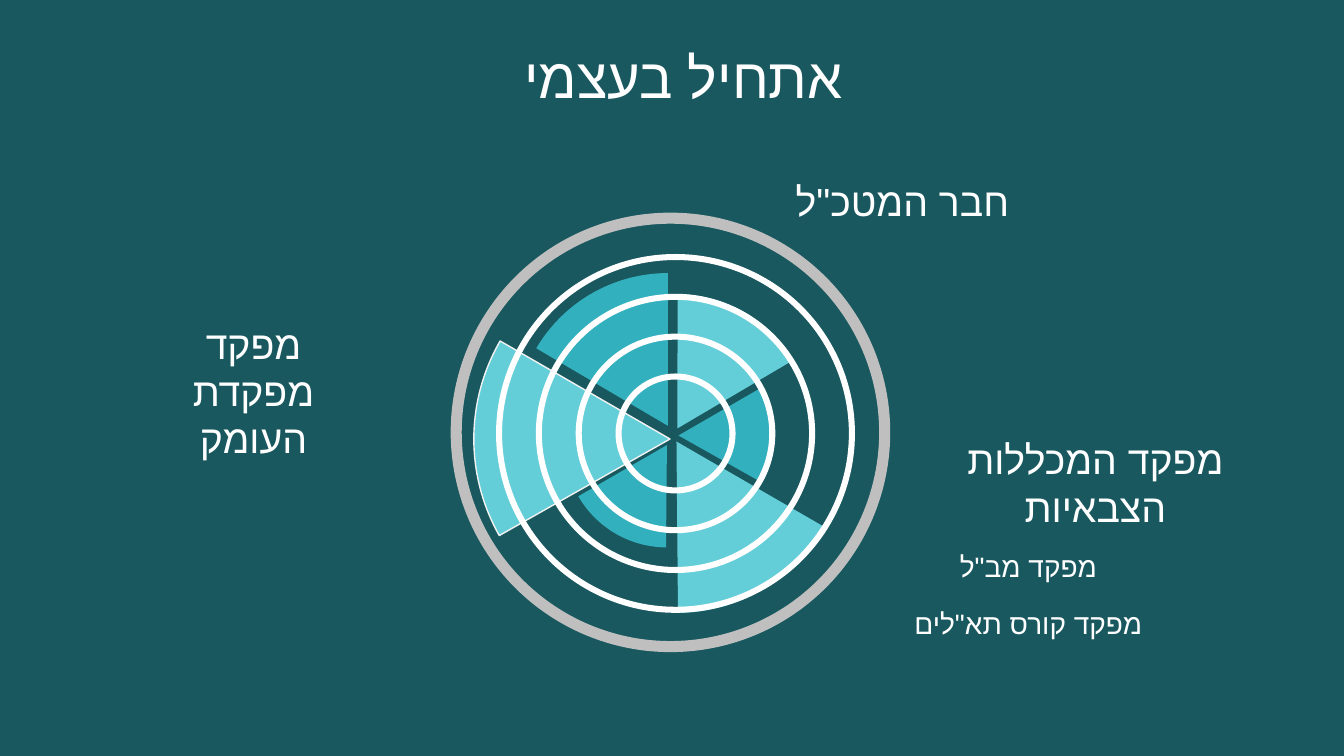
from lxml.etree import SubElement
from pptx import Presentation
from pptx.dml.color import RGBColor
from pptx.enum.shapes import MSO_SHAPE
from pptx.enum.text import MSO_ANCHOR, MSO_AUTO_SIZE, PP_ALIGN
from pptx.oxml.ns import qn
from pptx.util import Inches, Pt

BACKGROUND = RGBColor(0x19, 0x58, 0x5F)
WHITE = RGBColor(0xFF, 0xFF, 0xFF)
GREY = RGBColor(0xBF, 0xBF, 0xBF)
TEAL = RGBColor(0x32, 0xB0, 0xBE)
AQUA = RGBColor(0x64, 0xCE, 0xD8)
EDGE = RGBColor(0xF2, 0xF2, 0xF2)
FONT = "Arial"

HEADING = ("אתחיל בעצמי", 4.6, 0.4, 4.36, 0.79, 40)
ROLES = [
    ('מפקד קורס תא"לים', 8.96, 5.98, 2.48, 0.4, 20),
    ('מפקד מב"ל', 8.96, 5.42, 2.48, 0.39, 20),
    ("מפקד המכללות הצבאיות", 9.4, 4.32, 2.93, 0.94, 28),
    ("מפקד מפקדת העומק", 1.33, 3.38, 2.37, 1, 28),
    ('חבר המטכ"ל', 7.72, 1.52, 2.46, 0.94, 28),
]
LEFT_WEDGES = [
    (5.11, 2.71, 3.03, 3.03, TEAL, None),
    (4.7, 2.41, 3.89, 3.89, AQUA, EDGE),
    (5.6, 3.4, 2.03, 2.03, TEAL, None),
]
RIGHT_WEDGES = [
    (5.4, 2.92, 2.64, 2.66, AQUA, None),
    (5.78, 3.37, 1.9, 1.9, TEAL, None),
    (5.01, 2.68, 3.4, 3.4, AQUA, None),
]
WEDGE_ANGLES = (126.304, 162)
WEDGE_STEP = 60

RING_CENTRE = (6.7, 4.3)
RING_COUNT = 4
RING_FIRST, RING_STEP, RING_WIDTH = 1.19, 0.79, 0.06
RIM_CENTRE, RIM_DIAMETER, RIM_WIDTH = (6.65, 4.29), 4.36, 0.11


def add_figure(slide, preset, box, adjustments, fill, edge=None):
    figure = slide.shapes.add_shape(preset, *map(Inches, box))
    for index, value in enumerate(adjustments):
        figure.adjustments[index] = value
    figure.shadow.inherit = False
    figure.fill.solid()
    figure.fill.fore_color.rgb = fill
    if edge is None:
        figure.line.fill.background()
    else:
        figure.line.color.rgb = edge
        figure.line.width = Pt(1)
    return figure


def add_ring(slide, centre, diameter, width, fill):
    left, top = (middle - diameter / 2 for middle in centre)
    add_figure(slide, MSO_SHAPE.DONUT, (left, top, diameter, diameter),
               [width / diameter], fill)


def add_wedges(slide, wedges, mirrored):
    for index, (left, top, width, height, fill, edge) in enumerate(wedges):
        wedge = add_figure(slide, MSO_SHAPE.PIE, (left, top, width, height),
                           WEDGE_ANGLES, fill, edge)
        turn = WEDGE_STEP * index
        wedge.rotation = turn if mirrored else -turn % 360
        if mirrored:
            wedge._element.spPr.find(qn("a:xfrm")).set("flipH", "1")


def write_hebrew(holder, wording, size):
    frame = holder.text_frame
    frame.text = wording
    frame.word_wrap = True
    frame.auto_size = MSO_AUTO_SIZE.NONE
    frame.vertical_anchor = MSO_ANCHOR.MIDDLE
    paragraph = frame.paragraphs[0]
    paragraph.alignment = PP_ALIGN.CENTER
    paragraph._p.get_or_add_pPr().set("rtl", "1")
    run = paragraph.runs[0]
    run.font.size = Pt(size)
    run.font.bold = False
    run.font.color.rgb = WHITE
    run.font.name = FONT
    SubElement(run._r.get_or_add_rPr(), qn("a:cs")).set("typeface", FONT)


def main():
    deck = Presentation()
    deck.slide_width, deck.slide_height = Inches(13.33), Inches(7.5)
    slide = deck.slides.add_slide(deck.slide_layouts[5])
    slide.background.fill.solid()
    slide.background.fill.fore_color.rgb = BACKGROUND

    wording, left, top, width, height, size = HEADING
    title = slide.shapes.title
    title.left, title.top = Inches(left), Inches(top)
    title.width, title.height = Inches(width), Inches(height)
    write_hebrew(title, wording, size)
    title.text_frame.paragraphs[0].line_spacing = 0.9

    add_ring(slide, RIM_CENTRE, RIM_DIAMETER, RIM_WIDTH, GREY)
    add_wedges(slide, LEFT_WEDGES, mirrored=False)
    add_wedges(slide, RIGHT_WEDGES, mirrored=True)
    for index in range(RING_COUNT):
        add_ring(slide, RING_CENTRE, RING_FIRST + RING_STEP * index, RING_WIDTH, WHITE)

    for wording, *box, size in ROLES:
        write_hebrew(slide.shapes.add_textbox(*map(Inches, box)), wording, size)

    deck.save("out.pptx")


if __name__ == "__main__":
    main()
